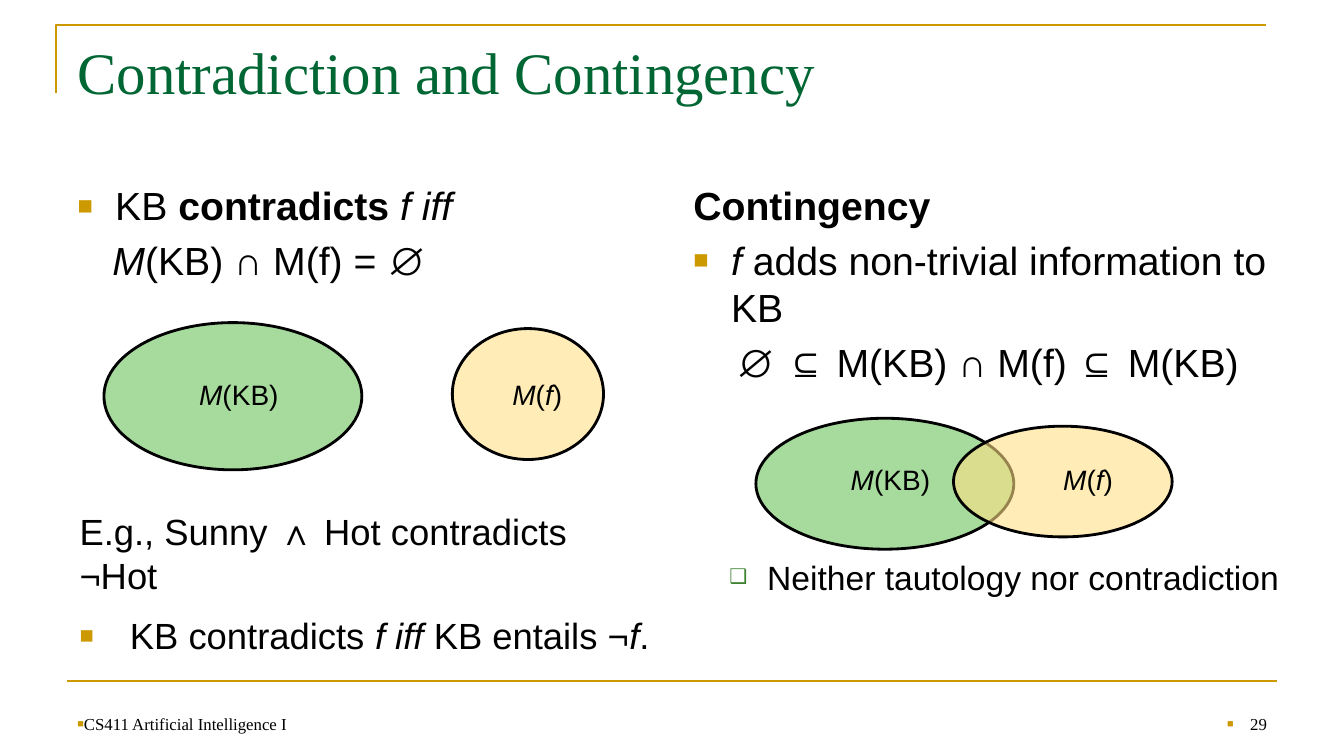
import pptx
import pptx.util
import pptx.dml.color
import pptx.enum.shapes
import pptx.enum.text
import pptx.oxml
import pptx.oxml.ns
from lxml import etree
from pptx.util import Cm

COLORS = {
    "rule": "CC9900",
    "title": "006633",
    "text": "000000",
    "sub_bullet": "3B812F",
    "kb": "A6DB9D",
    "f": "FFE085",
}
SQUARE = ("■", "rule", 65)
BOX = ("❑", "sub_bullet", 60)
M_KB = [("M", "i"), ("(KB)", "")]
M_F = [("M", "i"), ("(", ""), ("f", "i"), (")", "")]


def rgb(name):
    return pptx.dml.color.RGBColor.from_string(COLORS[name])


def add_child(parent, tag, **attributes):
    child = etree.SubElement(parent, pptx.oxml.ns.qn(tag))
    for key, value in attributes.items():
        child.set(key, str(value))
    return child


def write_paragraph(paragraph, runs, size, font="Arial", color="text", before=0,
                    margin=0, hanging=0, bullet=None, level=0,
                    align=pptx.enum.text.PP_ALIGN.LEFT):
    """Runs are (text, style) pairs; style holds b for bold, i for italic."""
    paragraph.level = level
    paragraph.alignment = align
    paragraph.space_before = pptx.util.Pt(before)
    paragraph.space_after = pptx.util.Pt(0)
    paragraph.line_spacing = 1.0
    properties = paragraph._p.get_or_add_pPr()
    properties.set("marL", str(Cm(margin)))
    properties.set("indent", str(-Cm(hanging)))
    if bullet:
        char, bullet_color, percent = bullet
        add_child(add_child(properties, "a:buClr"), "a:srgbClr", val=COLORS[bullet_color])
        add_child(properties, "a:buSzPct", val=percent * 1000)
        add_child(properties, "a:buFont", typeface="Arial")
        add_child(properties, "a:buChar", char=char)
    else:
        add_child(properties, "a:buNone")
    for text, style in runs:
        run = paragraph.add_run()
        run.text = text
        run.font.name = font
        run.font.size = pptx.util.Pt(size)
        run.font.bold = "b" in style
        run.font.italic = "i" in style
        run.font.color.rgb = rgb(color)


def fill_frame(frame, paragraphs, anchor=pptx.enum.text.MSO_ANCHOR.TOP):
    frame.word_wrap = True
    frame.auto_size = pptx.enum.text.MSO_AUTO_SIZE.NONE
    frame.vertical_anchor = anchor
    for number, options in enumerate(paragraphs):
        paragraph = frame.add_paragraph() if number else frame.paragraphs[0]
        write_paragraph(paragraph, **options)


def fill_placeholder(holder, left, top, width, height, paragraphs):
    holder.left, holder.top = Cm(left), Cm(top)
    holder.width, holder.height = Cm(width), Cm(height)
    fill_frame(holder.text_frame, paragraphs)


def add_text(slide, left, top, width, height, anchor, **options):
    box = slide.shapes.add_textbox(Cm(left), Cm(top), Cm(width), Cm(height))
    fill_frame(box.text_frame, [options], anchor)


def add_label(slide, center_x, center_y, runs):
    width, height = 3, 1.12
    add_text(slide, center_x - width / 2, center_y - height / 2, width, height,
             pptx.enum.text.MSO_ANCHOR.MIDDLE, runs=runs, size=20,
             align=pptx.enum.text.PP_ALIGN.CENTER)


def add_model_set(slide, left, top, width, height, color, opacity=100):
    ellipse = slide.shapes.add_shape(pptx.enum.shapes.MSO_SHAPE.OVAL,
                                     Cm(left), Cm(top), Cm(width), Cm(height))
    ellipse.shadow.inherit = False
    ellipse.fill.solid()
    ellipse.fill.fore_color.rgb = rgb(color)
    ellipse.line.color.rgb = rgb("text")
    ellipse.line.width = pptx.util.Pt(2)
    if opacity < 100:
        fill = ellipse._element.spPr.find(pptx.oxml.ns.qn("a:solidFill"))
        add_child(fill[0], "a:alpha", val=opacity * 1000)


def style_rule(rule):
    rule.line.color.rgb = rgb("rule")
    rule.line.width = pptx.util.Pt(1.5)


def add_frame_lines(slide):
    left, top, right, bottom = 1.42, 0.64, 31.9, 2.34
    builder = slide.shapes.build_freeform(Cm(left), Cm(bottom))
    builder.add_line_segments([(Cm(left), Cm(top)), (Cm(right), Cm(top))], close=False)
    bracket = builder.convert_to_shape()
    bracket.shadow.inherit = False
    bracket.fill.background()
    style_rule(bracket)

    footer_rule = slide.shapes.add_connector(pptx.enum.shapes.MSO_CONNECTOR.STRAIGHT,
                                             Cm(1.7), Cm(17.15), Cm(32.18), Cm(17.15))
    style_rule(footer_rule)
    add_child(footer_rule._element.spPr, "a:effectLst")


def main():
    deck = pptx.Presentation()
    deck.slide_width, deck.slide_height = Cm(33.87), Cm(19.05)
    slide = deck.slides.add_slide(deck.slide_layouts[3])
    title, contradiction, contingency = slide.placeholders
    add_frame_lines(slide)

    # Title
    fill_placeholder(title, 1.7, 0.76, 30.48, 3.18, [
        dict(runs=[("Contradiction and Contingency", "")], size=42,
             font="Times New Roman", color="title")])

    # Contradiction: the spacing before the example leaves room for the diagram
    fill_placeholder(contradiction, 1.7, 4.45, 14.96, 12.57, [
        dict(runs=[("KB ", ""), ("contradicts ", "b"), ("f iff", "i")], size=28,
             before=3, margin=0.95, hanging=0.95, bullet=SQUARE),
        dict(runs=[("M", "i"), ("(KB) ∩ M(f) = ∅", "")], size=28, before=5.6, margin=0.88),
        dict(runs=[("E.g., Sunny ∧ Hot contradicts ¬Hot", "")], size=26,
             before=161, margin=0.05),
        dict(runs=[("KB contradicts ", ""), ("f iff ", "i"), ("KB entails ¬", ""),
                   ("f", "i"), (".", "")],
             size=26, before=12, margin=1.32, hanging=1.27, bullet=SQUARE)])

    # Contingency: again with room for the diagram
    fill_placeholder(contingency, 17.22, 4.45, 15.32, 12.57, [
        dict(runs=[("Contingency", "b")], size=28, before=3),
        dict(runs=[("f", "i"), (" adds non-trivial information to KB", "")], size=28,
             before=5.6, margin=0.95, hanging=0.95, bullet=SQUARE),
        dict(runs=[("∅ ⊆ M(KB) ∩ M(f) ⊆ M(KB)", "")], size=28, before=5.6, margin=1.09),
        dict(runs=[("Neither tautology nor contradiction", "")], size=24, before=122,
             margin=1.86, hanging=0.95, bullet=BOX, level=1)])

    # Disjoint model sets
    add_model_set(slide, 2.62, 8.13, 6.5, 3.71, "kb")
    add_model_set(slide, 11.4, 8.28, 3.81, 3.3, "f", 59)
    add_label(slide, 6.02, 9.93, M_KB)
    add_label(slide, 13.54, 9.93, M_F)

    # Overlapping model sets
    add_model_set(slide, 19.05, 10.54, 6.5, 3.3, "kb")
    add_model_set(slide, 24.03, 10.74, 5.51, 2.79, "f", 59)
    add_label(slide, 22.44, 12.07, M_KB)
    add_label(slide, 27.42, 12.07, M_F)

    # Footer
    footer = dict(size=12, font="Times New Roman", bullet=SQUARE)
    bottom = pptx.enum.text.MSO_ANCHOR.BOTTOM
    add_text(slide, 1.7, 17.35, 20.6, 1.27, bottom,
             runs=[("CS411 Artificial Intelligence I", "")], **footer)
    add_text(slide, 24.28, 17.35, 7.9, 1.27, bottom, runs=[("29", "")],
             margin=0.58, hanging=0.58, align=pptx.enum.text.PP_ALIGN.RIGHT, **footer)

    deck.save("out.pptx")


if __name__ == "__main__":
    main()
